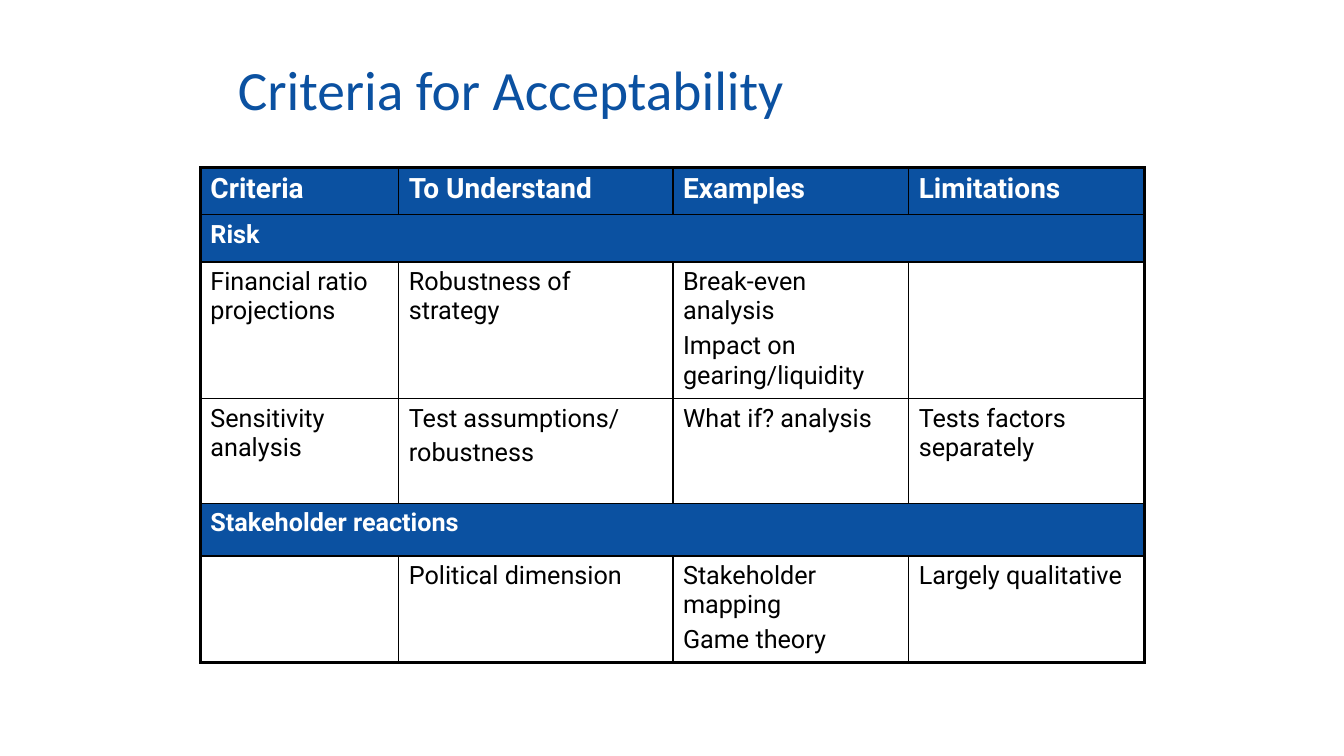
from lxml.etree import SubElement
from pptx import Presentation
from pptx.dml.color import RGBColor
from pptx.enum.text import MSO_ANCHOR, MSO_AUTO_SIZE, PP_ALIGN
from pptx.oxml.ns import qn
from pptx.util import Cm, Pt

BLUE = "0B51A1"
WHITE = "FFFFFF"
BLACK = "000000"
COLUMN_WIDTHS = [5.0, 6.91, 5.94, 5.94]
ROW_HEIGHTS = [1.19, 1.19, 3.45, 2.64, 1.32, 2.69]
HEADER_ROW = 0
SECTION_ROWS = [1, 4]
CRITERIA = [
    [["Criteria"], ["To Understand"], ["Examples"], ["Limitations"]],
    [["Risk"], [], [], []],
    [["Financial ratio projections"], ["Robustness of strategy"],
     ["Break-even analysis", "Impact on gearing/liquidity"], []],
    [["Sensitivity analysis"], ["Test assumptions/", "robustness"],
     ["What if? analysis"], ["Tests factors separately"]],
    [["Stakeholder reactions"], [], [], []],
    [[], ["Political dimension"], ["Stakeholder mapping", "Game theory"],
     ["Largely qualitative"]],
]


def color(value):
    return RGBColor.from_string(value)


def add_run(paragraph, text, font_name, size, font_color, bold=False):
    run = paragraph.add_run()
    run.text = text
    run.font.name = font_name
    run.font.size = Pt(size)
    run.font.bold = bold
    run.font.color.rgb = color(font_color)


def set_borders(cell, widths):
    properties = cell._tc.get_or_add_tcPr()
    for side, width in widths.items():
        line = SubElement(properties, qn(f"a:ln{side}"), w=str(Pt(width)))
        fill = SubElement(line, qn("a:solidFill"))
        SubElement(fill, qn("a:srgbClr"), val=BLACK)


def fill_cell(cell, texts, size, is_heading):
    if is_heading:
        cell.fill.solid()
        cell.fill.fore_color.rgb = color(BLUE)
    else:
        cell.fill.background()
    frame = cell.text_frame
    for index, text in enumerate(texts):
        paragraph = frame.add_paragraph() if index else frame.paragraphs[0]
        paragraph.space_before = Pt(size * 0.2)
        add_run(paragraph, text, "Roboto", size, WHITE if is_heading else BLACK, is_heading)


def place_title(slide, left, top, width, height):
    title = slide.shapes.title
    title.left, title.top, title.width, title.height = map(Cm, (left, top, width, height))
    frame = title.text_frame
    frame.auto_size = MSO_AUTO_SIZE.NONE
    frame.vertical_anchor = MSO_ANCHOR.MIDDLE
    paragraph = frame.paragraphs[0]
    paragraph.alignment = PP_ALIGN.LEFT
    paragraph.line_spacing = 0.9
    add_run(paragraph, "Criteria for Acceptability", "Calibri", 39.6, BLUE)


def place_criteria_table(slide, left, top, width, height):
    last_row = len(ROW_HEIGHTS) - 1
    last_column = len(COLUMN_WIDTHS) - 1
    table = slide.shapes.add_table(
        last_row + 1, last_column + 1, Cm(left), Cm(top), Cm(width), Cm(height)
    ).table
    table.first_row = False
    table.horz_banding = False
    for column, share in zip(table.columns, COLUMN_WIDTHS):
        column.width = Cm(width * share / sum(COLUMN_WIDTHS))
    for row, share in zip(table.rows, ROW_HEIGHTS):
        row.height = Cm(height * share / sum(ROW_HEIGHTS))
    for row_index in SECTION_ROWS:
        table.cell(row_index, 0).merge(table.cell(row_index, last_column))
    for row_index, row in enumerate(CRITERIA):
        is_heading = row_index == HEADER_ROW or row_index in SECTION_ROWS
        size = 20 if row_index == HEADER_ROW else 18
        for column_index, texts in enumerate(row):
            cell = table.cell(row_index, column_index)
            set_borders(cell, {
                "L": 2.25 if column_index == 0 else 1,
                "R": 2.25 if column_index == last_column or row_index in SECTION_ROWS else 1,
                "T": 2.25 if row_index == 0 else 1,
                "B": 2.25 if row_index == last_row else 1,
            })
            fill_cell(cell, texts, size, is_heading)


def main():
    presentation = Presentation()
    presentation.slide_width = Cm(33.87)
    presentation.slide_height = Cm(19.05)
    slide = presentation.slides.add_slide(presentation.slide_layouts[5])
    place_title(slide, 5.74, 1.42, 22.86, 1.8)
    place_criteria_table(slide, 5.05, 4.22, sum(COLUMN_WIDTHS), sum(ROW_HEIGHTS))
    presentation.save("out.pptx")


if __name__ == "__main__":
    main()
